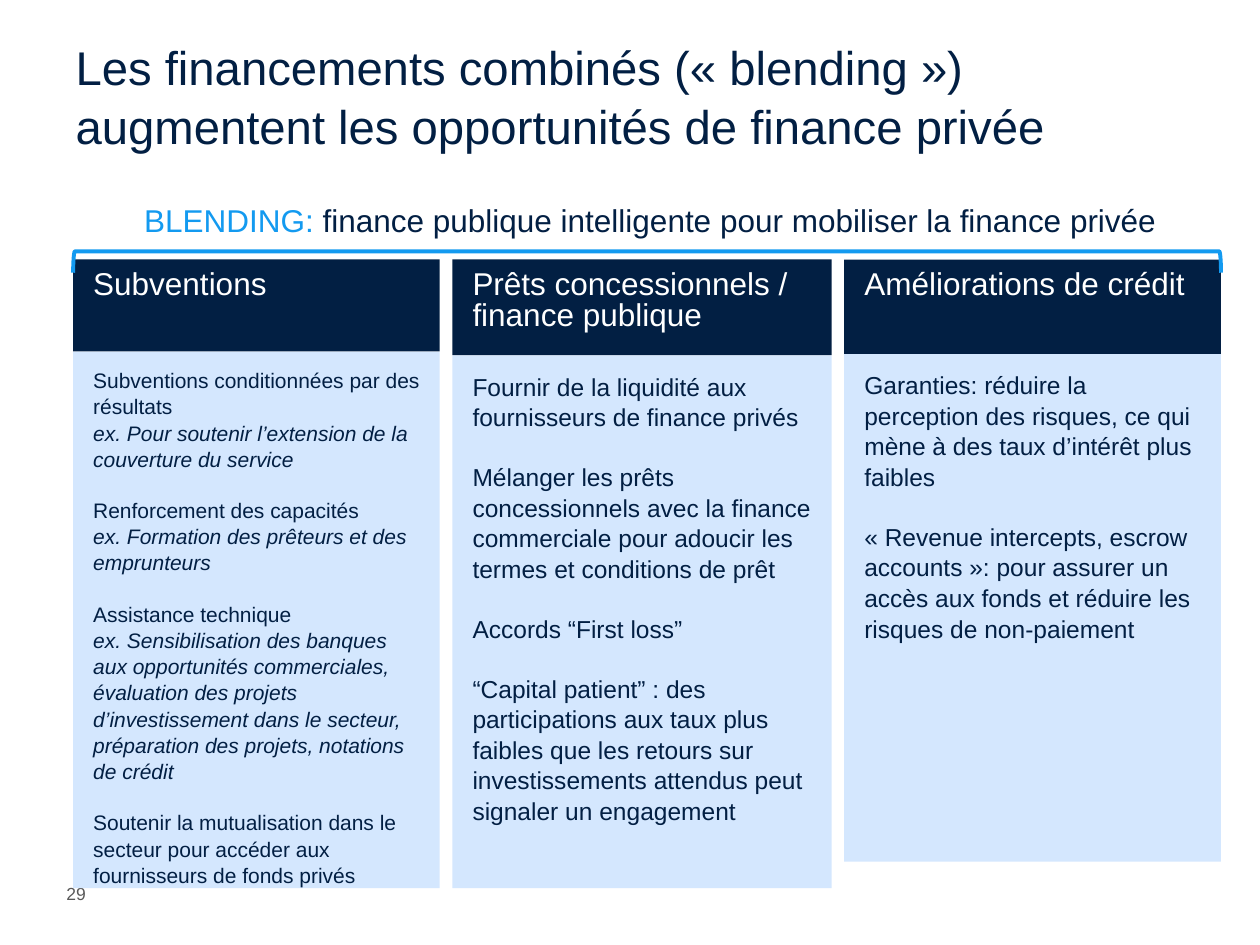
from dataclasses import dataclass
from pptx import Presentation
from pptx.dml.color import RGBColor as RGB
from pptx.enum.shapes import MSO_SHAPE as Shape
from pptx.enum.text import MSO_ANCHOR as Anchor, MSO_AUTO_SIZE as Fit, PP_ALIGN as Align
from pptx.util import Inches, Pt


@dataclass(frozen=True)
class Theme:
    navy: RGB = RGB.from_string("021F43")
    sky: RGB = RGB.from_string("139AF0")
    pale: RGB = RGB.from_string("D4E7FE")
    white: RGB = RGB.from_string("FFFFFF")
    gray: RGB = RGB.from_string("595959")
    face: str = "Arial"
    title: int = 27
    head: int = 18
    note: int = 10


T = Theme()

# Content
TITLE = "Les financements combinés («\u00a0blending\u00a0») augmentent les opportunités de finance privée"
PAGE = "29"
BANNER = [
    ("BLENDING: ", T.sky),
    ("finance publique intelligente pour mobiliser la finance privée", T.navy),
]
# Each point is a lead and, where there is one, an example in italics
COLS = [
    dict(head="Subventions", wide=2.91, tall=0.73, end=7.05, size=12, points=[
        ("Subventions conditionnées par des résultats",
         "ex. Pour soutenir l’extension de la couverture du service"),
        ("Renforcement des capacités",
         "ex. Formation des prêteurs et des emprunteurs"),
        ("Assistance technique",
         "ex. Sensibilisation des banques aux opportunités commerciales, "
         "évaluation des projets d’investissement dans le secteur, "
         "préparation des projets, notations de crédit"),
        ("Soutenir la mutualisation dans le secteur pour accéder aux "
         "fournisseurs de fonds privés",),
    ]),
    dict(head="Prêts concessionnels / finance publique",
         wide=3.01, tall=0.76, end=7.05, size=14, points=[
        ("Fournir de la liquidité aux fournisseurs de finance privés",),
        ("Mélanger les prêts concessionnels avec la finance commerciale "
         "pour adoucir les termes et conditions de prêt",),
        ("Accords “First loss”",),
        ("“Capital patient” : des participations aux taux plus faibles que "
         "les retours sur investissements attendus peut signaler un engagement",),
    ]),
    dict(head="Améliorations de crédit", wide=2.99, tall=0.75, end=6.84, size=14, points=[
        ("Garanties: réduire la perception des risques, ce qui mène à des "
         "taux d’intérêt plus faibles",),
        ("«\u00a0Revenue intercepts, escrow accounts\u00a0»: pour assurer un "
         "accès aux fonds et réduire les risques de non-paiement",),
    ]),
]

# Grid
LEFT, TOP, GAP = 0.58, 2.06, 0.1
SPAN = sum(c["wide"] for c in COLS) + GAP * (len(COLS) - 1)
LEAD = 1.04  # line spacing of body text


def style(par, size, color, align=Align.LEFT):
    par.alignment = align
    font = par.font
    font.name, font.size, font.color.rgb = T.face, Pt(size), color


def label(slide, box, anchor):
    frame = slide.shapes.add_textbox(*map(Inches, box)).text_frame
    frame.word_wrap, frame.vertical_anchor = True, anchor
    return frame.paragraphs[0]


def panel(slide, box, fill, inset):
    shape = slide.shapes.add_shape(Shape.RECTANGLE, *map(Inches, box))
    shape.shadow.inherit = False
    shape.fill.solid()
    shape.fill.fore_color.rgb = fill
    shape.line.fill.background()
    frame = shape.text_frame
    frame.word_wrap, frame.vertical_anchor = True, Anchor.TOP
    frame.margin_left, frame.margin_right = Inches(0.16), Inches(0.12)
    frame.margin_top, frame.margin_bottom = Inches(inset), Inches(0.05)
    return frame


def column(slide, left, col):
    # Body
    split = TOP + col["tall"]
    frame = panel(slide, (left, split, col["wide"], col["end"] - split), T.pale, 0.12)
    par = frame.paragraphs[0]
    for n, point in enumerate(col["points"]):
        for k, text in enumerate(point):
            if n or k:
                par = frame.add_paragraph()
            par.text = text
            style(par, col["size"], T.navy)
            par.font.italic = k > 0
            par.line_spacing = LEAD
            par.space_before = Pt(col["size"] * 1.2 if n and not k else 0)

    # Heading
    par = panel(slide, (left, TOP, col["wide"], col["tall"]), T.navy, 0.08).paragraphs[0]
    par.text = col["head"]
    style(par, T.head, T.white)
    par.line_spacing = Pt(18.2)


def main():
    deck = Presentation()
    deck.slide_width, deck.slide_height = Inches(10), Inches(7.5)
    slide = deck.slides.add_slide(deck.slide_layouts[5])

    # Title
    title = slide.shapes.title
    title.left, title.top, title.width, title.height = map(Inches, (0.5, 0.23, 9, 0.78))
    frame = title.text_frame
    frame.text = TITLE
    frame.word_wrap, frame.auto_size, frame.vertical_anchor = True, Fit.NONE, Anchor.TOP
    style(frame.paragraphs[0], T.title, T.navy)
    frame.paragraphs[0].line_spacing = 1.05

    # Page number
    par = label(slide, (0.25, 6.89, 0.53, 0.4), Anchor.MIDDLE)
    par.text = PAGE
    style(par, T.note, T.gray, Align.RIGHT)

    # Columns
    left = LEFT
    for col in COLS:
        column(slide, left, col)
        left += col["wide"] + GAP

    # Banner
    par = label(slide, (0.54, 1.49, 9.24, 0.51), Anchor.MIDDLE)
    style(par, T.head, T.navy, Align.CENTER)
    for text, color in BANNER:
        run = par.add_run()
        run.text = text
        run.font.color.rgb = color

    # Bracket over the columns: a left bracket turned to open downwards
    thick, mid, high = 0.17, LEFT + SPAN / 2, 2.08
    arc = slide.shapes.add_shape(
        Shape.LEFT_BRACKET,
        *map(Inches, (mid - thick / 2, high - SPAN / 2, thick, SPAN)))
    arc.rotation = 90
    arc.shadow.inherit = False
    arc.fill.background()
    arc.line.color.rgb, arc.line.width = T.sky, Pt(2.25)

    deck.save("out.pptx")


if __name__ == "__main__":
    main()
